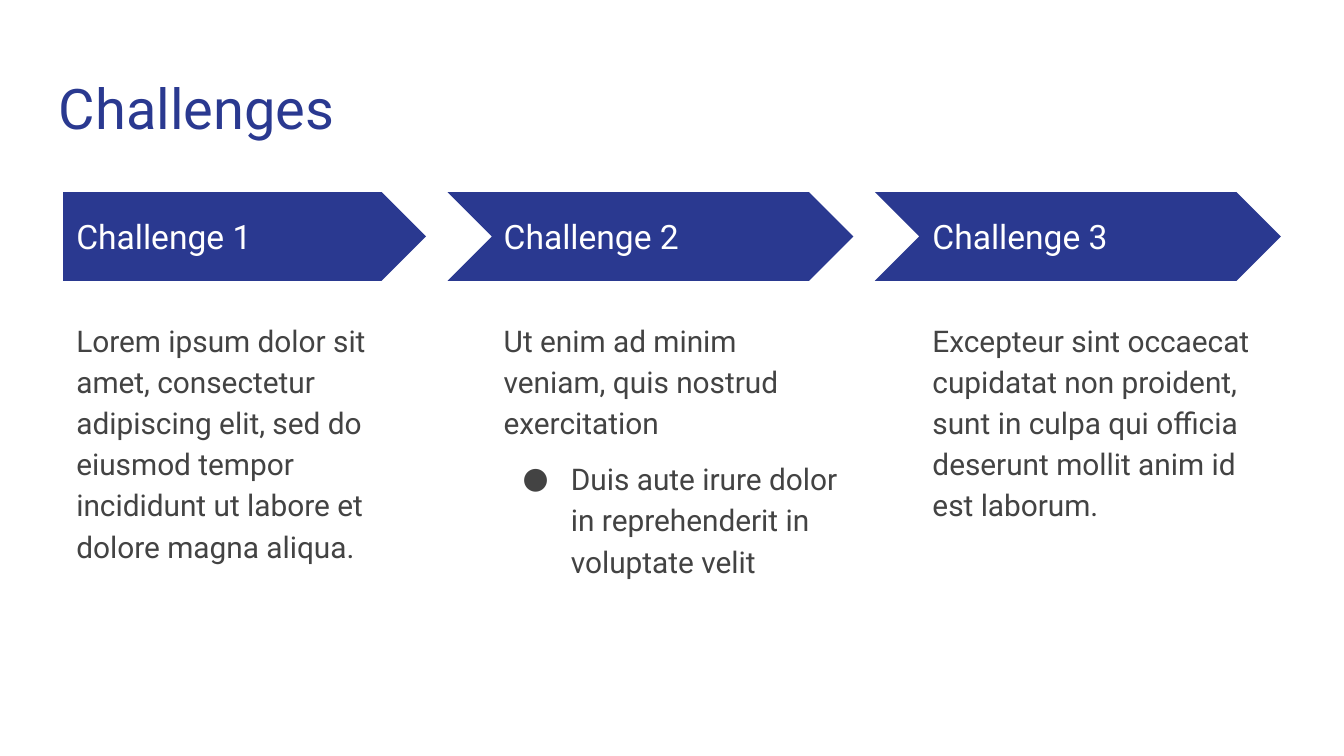
from lxml.etree import SubElement
from pptx import Presentation
from pptx.dml.color import RGBColor
from pptx.enum.lang import MSO_LANGUAGE_ID as Language
from pptx.enum.shapes import MSO_SHAPE as Shape
from pptx.enum.text import MSO_ANCHOR as Anchor, PP_ALIGN as Align
from pptx.oxml.ns import qn
from pptx.util import Inches, Pt

NAVY = RGBColor(0x2A, 0x39, 0x90)
WHITE = RGBColor(0xFF, 0xFF, 0xFF)
GRAY = RGBColor(0x43, 0x43, 0x43)
FONT = "Roboto"


def add_text(slide, paragraphs, left, top, width, height, size, color,
             anchor=Anchor.TOP, line_spacing=1.0):
    """Add a wrapped text box and return its paragraphs."""
    box = slide.shapes.add_textbox(Inches(left), Inches(top), Inches(width), Inches(height))
    frame = box.text_frame
    frame.word_wrap = True
    frame.vertical_anchor = anchor
    frame.margin_left = frame.margin_right = Inches(0.1)
    frame.margin_top = frame.margin_bottom = Inches(0.1)
    frame.text = "\n".join(paragraphs)
    for paragraph in frame.paragraphs:
        paragraph.alignment = Align.LEFT
        paragraph.line_spacing = line_spacing
        font = paragraph.runs[0].font
        font.name, font.size, font.color.rgb = FONT, Pt(size), color
        font.language_id = Language.ENGLISH_US
    return frame.paragraphs


def make_bullet(paragraph, color):
    """Give a paragraph a hanging round bullet."""
    properties = paragraph._p.get_or_add_pPr()
    properties.set("marL", str(Inches(0.5)))
    properties.set("indent", str(Inches(-0.36)))
    bullet_color = SubElement(properties, qn("a:buClr"))
    SubElement(bullet_color, qn("a:srgbClr"), val=str(color))
    SubElement(properties, qn("a:buFont"), typeface=FONT)
    SubElement(properties, qn("a:buChar"), char="●")


# Widescreen slide, 16:9
presentation = Presentation()
presentation.slide_width = Inches(10)
presentation.slide_height = presentation.slide_width * 9 // 16
slide = presentation.slides.add_slide(presentation.slide_layouts[6])

# Title
add_text(slide, ["Challenges"], 0.34, 0.45, 9.32, 0.66, size=30, color=NAVY)

# Three columns: arrow, heading and description
ARROW_LEFT, ARROW_STEP, COLUMN_WIDTH = 0.47, 3.18, 2.7
NOTCH = 0.32  # chevrons start this far left of their column
columns = [
    (0.47, "Challenge 1", [
        "Lorem ipsum dolor sit amet, consectetur adipiscing elit, sed do "
        "eiusmod tempor incididunt ut labore et dolore magna aliqua."]),
    (3.65, "Challenge 2", [
        "Ut enim ad minim veniam, quis nostrud exercitation",
        "Duis aute irure dolor in reprehenderit in voluptate velit"]),
    (6.84, "Challenge 3", [
        "Excepteur sint occaecat cupidatat non proident, sunt in culpa qui "
        "officia deserunt mollit anim id est laborum."]),
]

for index, (text_left, heading, description) in enumerate(columns):
    kind, notch = (Shape.CHEVRON, NOTCH) if index else (Shape.PENTAGON, 0)

    arrow = slide.shapes.add_shape(
        kind, Inches(ARROW_LEFT + index * ARROW_STEP - notch), Inches(1.43),
        Inches(COLUMN_WIDTH + notch), Inches(0.66))
    arrow.adjustments[0] = 0.5
    arrow.shadow.inherit = False
    arrow.fill.solid()
    arrow.fill.fore_color.rgb = NAVY
    arrow.line.fill.background()

    add_text(slide, [heading], text_left, 1.59, 2.47, 0.34, size=18, color=WHITE,
             anchor=Anchor.MIDDLE)

    paragraphs = add_text(slide, description, text_left, 2.26, COLUMN_WIDTH, 2.9,
                          size=16, color=GRAY, line_spacing=1.15)
    paragraphs[-1].space_after = Pt(8)
    for paragraph in paragraphs[1:]:
        paragraph.space_before = Pt(8)
        make_bullet(paragraph, GRAY)

presentation.save("out.pptx")
